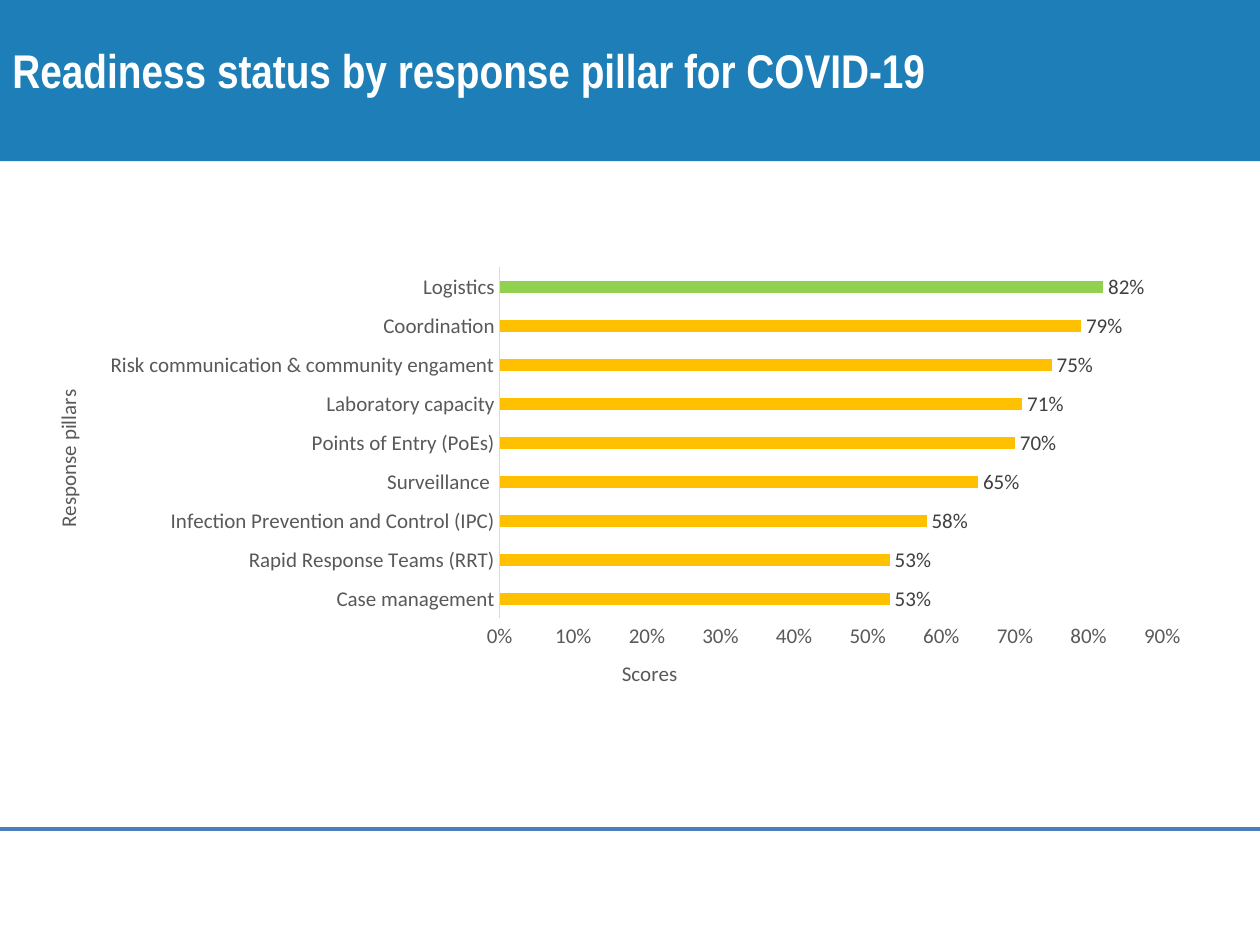
"""Build the COVID-19 readiness slide with its bar chart of response pillars."""
from lxml import etree
from pptx import Presentation
from pptx.chart.data import CategoryChartData
from pptx.dml.color import RGBColor
from pptx.enum.chart import XL_CHART_TYPE, XL_LABEL_POSITION, XL_TICK_MARK
from pptx.enum.shapes import MSO_CONNECTOR, MSO_SHAPE
from pptx.enum.text import MSO_ANCHOR
from pptx.oxml.ns import qn
from pptx.util import Pt

TITLE = "Readiness status by response pillar for COVID-19"
SCORES = [
    ("Case management", 0.53),
    ("Rapid Response Teams (RRT)", 0.53),
    ("Infection Prevention and Control (IPC)", 0.58),
    ("Surveillance ", 0.65),
    ("Points of Entry (PoEs)", 0.70),
    ("Laboratory capacity", 0.71),
    ("Risk communication & community engament", 0.75),
    ("Coordination", 0.79),
    ("Logistics", 0.82),
]
READY_FROM = 0.8
THEME = {
    "blue": "1E7FB8", "rule": "4B7EBC", "white": "FFFFFF", "amber": "FFC000",
    "green": "92D050", "axis": "D9D9D9", "text": "595959", "label": "404040",
    "title_size": 27, "chart_size": 12, "title_font": "Arial Narrow", "chart_font": "Calibri",
}
PLOT_LAYOUT = {"layoutTarget": "inner", "xMode": "edge", "yMode": "edge",
               "x": 0.4, "y": 0.02, "w": 0.56, "h": 0.77}
AXIS_TITLES = {
    "Response pillars": {"xMode": "edge", "yMode": "edge", "x": 0.02, "y": 0.28},
    "Scores": {"xMode": "edge", "yMode": "edge", "x": 0.5, "y": 0.87},
}


def color(name):
    return RGBColor.from_string(THEME[name])


def style_font(font, name, size, color_name, bold=False):
    font.name, font.size, font.bold = name, Pt(size), bold
    font.color.rgb = color(color_name)


def style_chart_font(font, color_name="text"):
    style_font(font, THEME["chart_font"], THEME["chart_size"], color_name)


def set_layout(parent, index, values):
    for layout in parent.findall(qn("c:layout")):
        parent.remove(layout)
    layout = etree.Element(qn("c:layout"))
    manual = etree.SubElement(layout, qn("c:manualLayout"))
    for name, value in values.items():
        etree.SubElement(manual, qn(f"c:{name}")).set("val", str(value))
    parent.insert(index, layout)


def style_axis(axis, title):
    axis.has_major_gridlines = False
    axis.major_tick_mark = axis.minor_tick_mark = XL_TICK_MARK.NONE
    style_chart_font(axis.tick_labels.font)
    frame = axis.axis_title.text_frame
    frame.text = title
    style_chart_font(frame.paragraphs[0].runs[0].font)
    set_layout(axis.axis_title._element, 1, AXIS_TITLES[title])


def add_title(slide):
    shape = slide.shapes.add_textbox(Pt(0), Pt(5.8), Pt(716.4), Pt(67.7))
    frame = shape.text_frame
    frame.word_wrap = True
    frame.vertical_anchor = MSO_ANCHOR.MIDDLE
    frame.text = TITLE
    style_font(frame.paragraphs[0].runs[0].font, THEME["title_font"],
               THEME["title_size"], "white", bold=True)


def add_score_chart(slide):
    data = CategoryChartData(number_format="0%")
    data.categories = [pillar for pillar, score in SCORES]
    data.add_series("Series 1", [score for pillar, score in SCORES])
    chart = slide.shapes.add_chart(
        XL_CHART_TYPE.BAR_CLUSTERED, Pt(15.1), Pt(147.6), Pt(676.1), Pt(260.6), data).chart
    chart.has_legend = chart.has_title = False
    style_chart_font(chart.font)
    set_layout(chart._chartSpace.chart.plotArea, 0, PLOT_LAYOUT)

    pillars, scores = chart.category_axis, chart.value_axis
    style_axis(pillars, "Response pillars")
    style_axis(scores, "Scores")
    pillars.axis_title.text_frame._txBody.bodyPr.set("rot", "-5400000")
    pillars.format.line.color.rgb = color("axis")
    pillars.format.line.width = Pt(0.75)
    scores.format.line.fill.background()
    scores.minimum_scale, scores.maximum_scale, scores.major_unit = 0, 0.9, 0.1
    scores.tick_labels.number_format = "0%"
    scores.tick_labels.number_format_is_linked = False

    plot = chart.plots[0]
    plot.gap_width, plot.vary_by_categories = 219, False
    series = plot.series[0]
    series.format.fill.solid()
    series.format.fill.fore_color.rgb = color("amber")
    for index, (pillar, score) in enumerate(SCORES):
        if score >= READY_FROM:
            fill = series.points[index].format.fill
            fill.solid()
            fill.fore_color.rgb = color("green")
    labels = series.data_labels
    labels.show_value = True
    labels.position = XL_LABEL_POSITION.OUTSIDE_END
    labels.number_format, labels.number_format_is_linked = "0%", False
    style_chart_font(labels.font, "label")


def main():
    presentation = Presentation()
    presentation.slide_width, presentation.slide_height = Pt(720), Pt(540)
    slide = presentation.slides.add_slide(presentation.slide_layouts[6])

    banner = slide.shapes.add_shape(MSO_SHAPE.RECTANGLE, Pt(0), Pt(-2.2), Pt(720), Pt(94.3))
    banner.shadow.inherit = False
    banner.fill.solid()
    banner.fill.fore_color.rgb = color("blue")
    banner.line.fill.background()

    rule = slide.shapes.add_connector(
        MSO_CONNECTOR.STRAIGHT, Pt(0), Pt(473.8), Pt(720), Pt(473.8))
    rule.line.color.rgb = color("rule")
    rule.line.width = Pt(2)
    etree.SubElement(rule._element.spPr, qn("a:effectLst"))

    add_title(slide)
    add_score_chart(slide)
    presentation.save("out.pptx")


if __name__ == "__main__":
    main()
